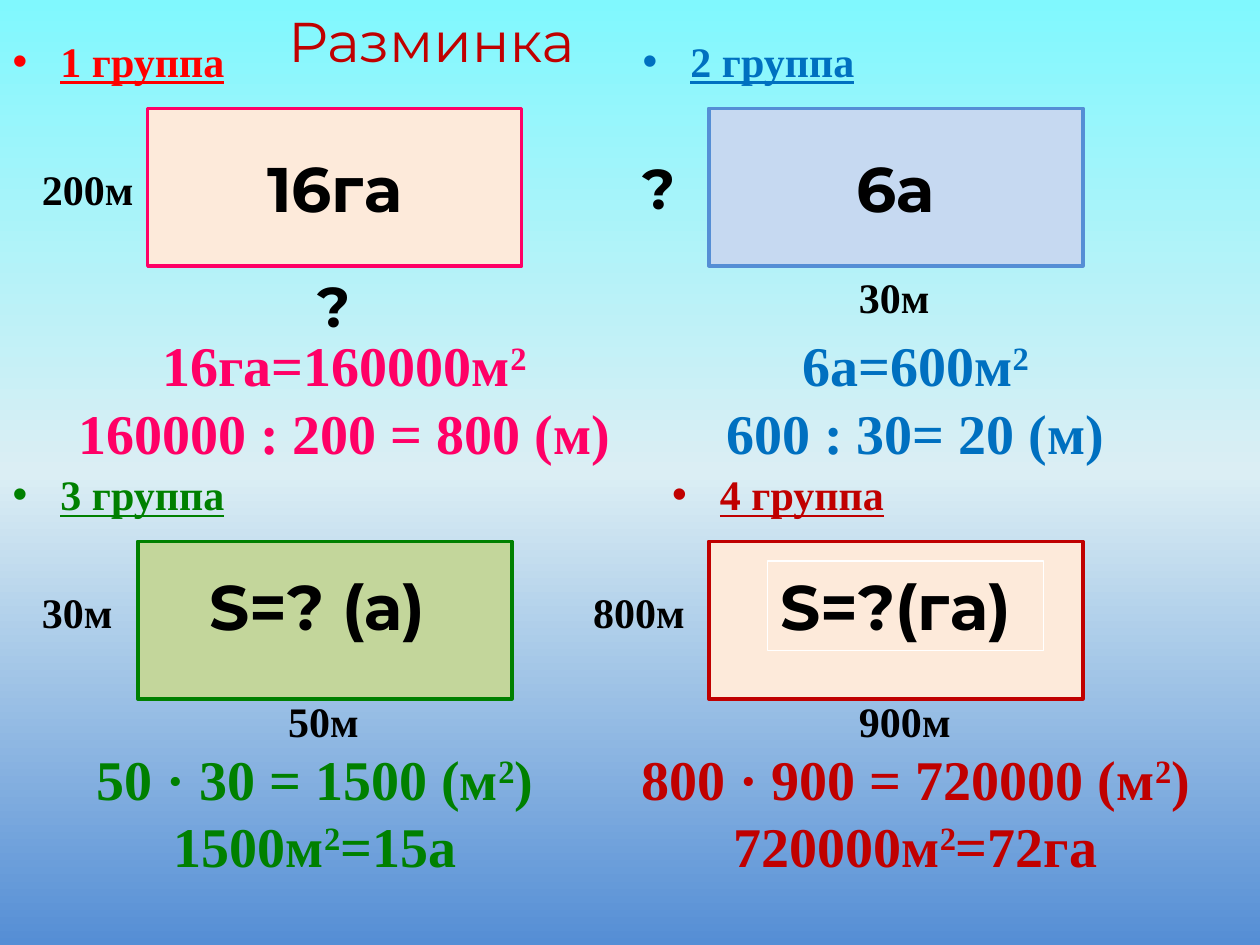
from dataclasses import dataclass
from lxml import etree
from pptx import Presentation, util as u
from pptx.dml.color import RGBColor
from pptx.enum import shapes, text
from pptx.oxml import ns
from copy import deepcopy


@dataclass
class Theme:
    serif: str = "Times New Roman"
    sans: str = "Montserrat"
    black: str = "000000"
    white: str = "FFFFFF"
    title: str = "C00000"
    sky: tuple = ((0, "80F8FE"), (0.5, "DBEEF4"), (1, "558ED5"))
    small: int = 24
    large: int = 32
    huge: int = 36


T = Theme()
COLS, ROWS = 128, 96
TALL = {T.small: 6.4, T.large: 8.2, T.huge: 9.1}
BOX = (38, 16)

GROUPS = [
    dict(head="1 группа", at=(0, 3, 26), ink="FF0000",
         box=(15, 11), fill="FDEADA", line="FF0066", area="16га",
         side=("200м", 3, 16, 12), base=("?", 31, 27, 6.1),
         sums=["16га=160000м²", "160000 : 200 = 800 (м)"], sum_at=(4, 33, 62, 15.1), sum_ink="FF0066"),
    dict(head="2 группа", at=(64, 3, 25), ink="0070C0",
         box=(72, 11), fill="C6D9F1", line="558ED5", area="6а",
         side=("?", 64, 15, 6.1), base=("30м", 86, 27, 9.9),
         sums=["6а=600м²", "600 : 30= 20 (м)"], sum_at=(70, 33, 46, 15.1), sum_ink="0070C0"),
    dict(head="3 группа", at=(0, 47, 27), ink="008000",
         box=(14, 55), fill="C3D69B", line="008000", find=("S=? (а)", 20, 57, 27),
         side=("30м", 3, 59, 9.9), base=("50м", 28, 70, 9.9),
         sums=["50 · 30 = 1500 (м²) 1500м²=15а"], sum_at=(0, 75, 64, 22.8), sum_ink="008000"),
    dict(head="4 группа", at=(67, 47, 25), ink="C00000",
         box=(72, 55), fill="FDEADA", line="C00000", find=("S=?(га)", 78, 57, 28), frame=T.white,
         side=("800м", 59, 59, 12), base=("900м", 86, 70, 12),
         sums=["800 · 900 = 720000 (м²) 720000м²=72га"], sum_at=(61, 75, 64, 22.8), sum_ink="C00000"),
]

deck = Presentation()
deck.slide_width, deck.slide_height = u.Inches(10), u.Inches(7.5)
slide = deck.slides.add_slide(deck.slide_layouts[4])


def rgb(code):
    return RGBColor.from_string(code)


def area(x, y, w, h):
    cw, rh = deck.slide_width / COLS, deck.slide_height / ROWS
    return [u.Emu(round(n)) for n in (x * cw, y * rh, w * cw, h * rh)]


def put(item, *cells):
    item.left, item.top, item.width, item.height = area(*cells)


def style(run, size, ink, face, bold):
    font = run.font
    font.size, font.name, font.bold = u.Pt(size), face, bold
    font.color.rgb = rgb(ink)


def write(item, lines, size, ink, face=T.serif, bold=True, mid=False, wrap=True, anchor="TOP"):
    frame = item.text_frame
    frame.word_wrap = wrap
    frame.auto_size = text.MSO_AUTO_SIZE.NONE
    frame.vertical_anchor = text.MSO_ANCHOR[anchor]
    frame.text = "\n".join(lines)
    for para in frame.paragraphs:
        para.alignment = text.PP_ALIGN.CENTER if mid else text.PP_ALIGN.LEFT
        parts = para.text.split("²")
        para.text = parts[0]
        for part in parts[1:]:
            power = para.add_run()
            power.text = "2"
            power.font._element.set("baseline", "30000")
            if part:
                para.add_run().text = part
        for run in para.runs:
            style(run, size, ink, face, bold)


def label(words, x, y, w, size, face=T.serif):
    item = slide.shapes.add_textbox(*area(x, y, w, TALL[size]))
    write(item, [words], size, T.black, face, wrap=False)
    return item


def heading(item, group):
    put(item, *group["at"], TALL[T.small])
    write(item, [group["head"]], T.small, group["ink"])
    para = item.text_frame.paragraphs[0]
    para.runs[0].font.underline = True
    props = para._p.get_or_add_pPr()
    props.set("marL", str(u.Inches(0.38)))
    props.set("indent", str(-u.Inches(0.38)))
    etree.SubElement(props, ns.qn("a:buFont")).set("typeface", "Arial")
    etree.SubElement(props, ns.qn("a:buChar")).set("char", "•")


def sketch(group):
    box = slide.shapes.add_shape(shapes.MSO_SHAPE.RECTANGLE, *area(*group["box"], *BOX))
    box.shadow.inherit = False
    box.fill.solid()
    box.fill.fore_color.rgb = rgb(group["fill"])
    box.line.color.rgb = rgb(group["line"])
    box.line.width = u.Pt(2)
    if "area" in group:
        write(box, [group["area"]], T.huge, T.black, T.sans, mid=True, anchor="MIDDLE")
    else:
        find = label(*group["find"], T.huge, T.sans)
        if "frame" in group:
            find.line.color.rgb = rgb(group["frame"])
            find.line.width = u.Pt(0.75)
    for mark in (group["side"], group["base"]):
        ask = mark[0] == "?"
        label(*mark, T.large if ask else T.small, T.sans if ask else T.serif)
    sums = slide.shapes.add_textbox(*area(*group["sum_at"]))
    write(sums, group["sums"], T.large, group["sum_ink"], mid=True)


def paint():
    fill = slide.background.fill
    fill.gradient()
    fill.gradient_angle = 270
    last = fill._fill._gradFill.gsLst[-1]
    last.addprevious(deepcopy(last))
    for stop, (place, ink) in zip(fill.gradient_stops, T.sky):
        stop.position = place
        stop.color.rgb = rgb(ink)


paint()
title, *heads = slide.placeholders
put(title, 28, 0, 39, TALL[T.large])
write(title, ["Разминка"], T.large, T.title, T.sans, bold=False)
for item, group in zip(heads, GROUPS):
    heading(item, group)
    sketch(group)
deck.save("out.pptx")
